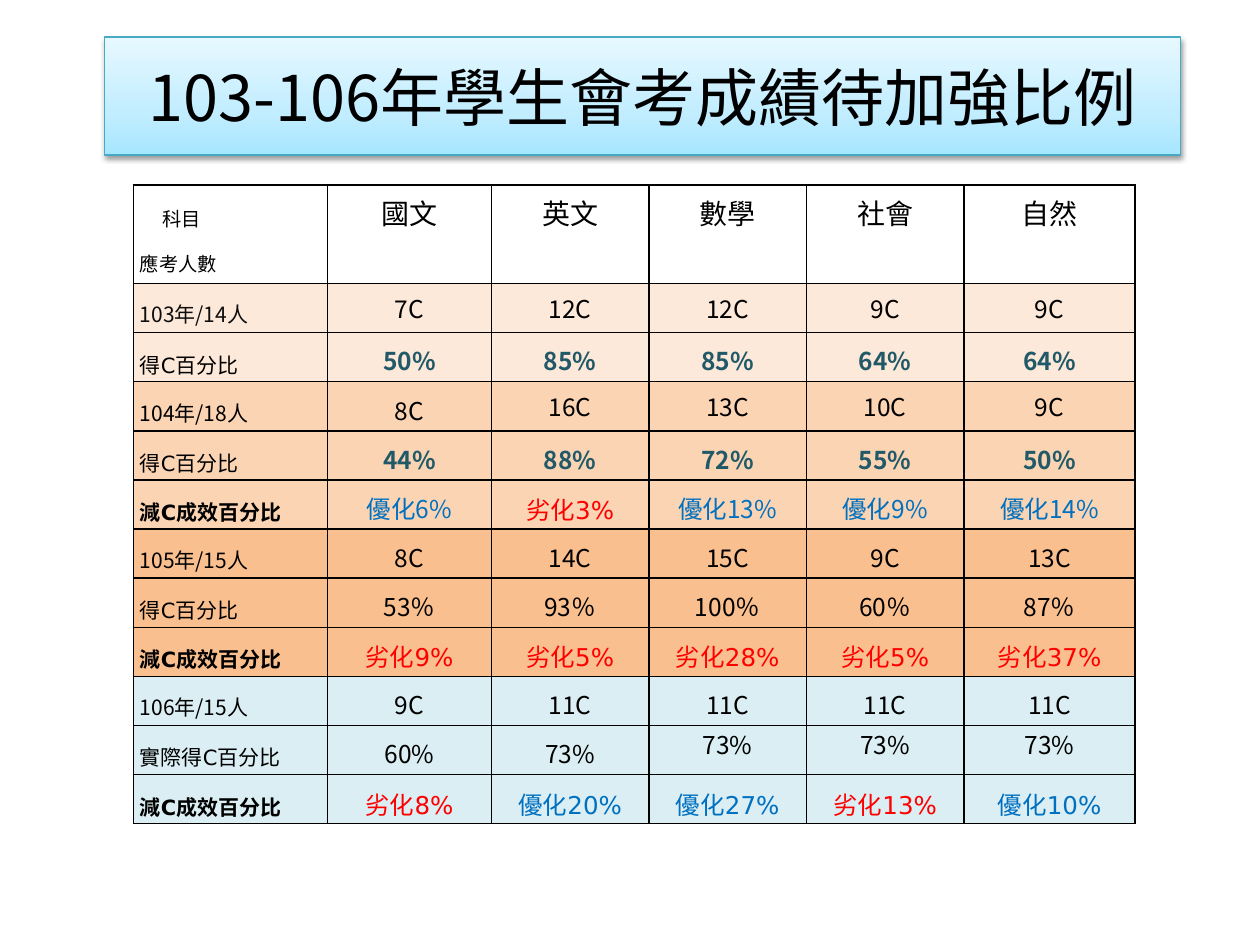
from dataclasses import dataclass

import pptx
import pptx.dml.color
import pptx.enum.text
import pptx.oxml
import pptx.oxml.ns
import pptx.util
from lxml import etree

RGB = pptx.dml.color.RGBColor
ALIGN = pptx.enum.text.PP_ALIGN
ANCHOR = pptx.enum.text.MSO_ANCHOR
NS = pptx.oxml.ns.nsdecls("a")
qn = pptx.oxml.ns.qn

BLACK = RGB(0x00, 0x00, 0x00)
SOFT_BLACK = RGB(0x0D, 0x0D, 0x0D)
TEAL = RGB(0x21, 0x59, 0x68)
BETTER_BLUE = RGB(0x00, 0x70, 0xC0)
WORSE_RED = RGB(0xFF, 0x00, 0x00)
TITLE_EDGE = RGB(0x46, 0xAA, 0xC5)
FILL_103 = RGB(0xFD, 0xE9, 0xD9)
FILL_104 = RGB(0xFB, 0xD4, 0xB4)
FILL_105 = RGB(0xFA, 0xBF, 0x8F)
FILL_106 = RGB(0xDA, 0xEE, 0xF3)
TITLE_STOPS = ((0, "A7E6FF"), (35, "C1EDFF"), (100, "E7F8FF"))

SC, JP, SANS = "Noto Sans CJK SC", "Noto Sans CJK JP", "DejaVu Sans"
SLIDE_W, SLIDE_H = 10, 7.5
COLUMNS = (1.54, 1.3, 1.25, 1.25, 1.25, 1.36)
HEADER_H, ROW_H = 0.78, 0.39
SUBJECTS = ("國文", "英文", "數學", "社會", "自然")
LABEL_SIZE, VALUE_SIZE, EXACT_LINE = 12, 14, 26


@dataclass
class Result:
    """One table row; values from column loose_from on have single line spacing."""
    label: str
    values: str
    fill: RGB
    label_font: str = SANS
    label_color: RGB = BLACK
    font: str = SC
    color: RGB = BLACK
    bold: bool = False
    label_bold: bool = False
    loose_from: int = len(COLUMNS)
    loose_anchor: ANCHOR = ANCHOR.MIDDLE


def count(label: str, values: str, fill: RGB, **options) -> Result:
    return Result(label, values, fill, label_font=JP, font=JP, **options)


def change(values: str, fill: RGB, font: str = SANS) -> Result:
    return Result("減C成效百分比", values, fill, font=font, label_bold=True)


SHARE = "得C百分比"
RESULTS = (
    count("103年/14人", "7C 12C 12C 9C 9C", FILL_103, label_color=SOFT_BLACK, loose_from=1),
    Result(SHARE, "50% 85% 85% 64% 64%", FILL_103, color=TEAL, bold=True),
    count("104年/18人", "8C 16C 13C 10C 9C", FILL_104, loose_from=2),
    Result(SHARE, "44% 88% 72% 55% 50%", FILL_104, color=TEAL, bold=True),
    change("優化6% 劣化3% 優化13% 優化9% 優化14%", FILL_104, SC),
    count("105年/15人", "8C 14C 15C 9C 13C", FILL_105),
    Result(SHARE, "53％ 93％ 100％ 60％ 87％", FILL_105),
    change("劣化9% 劣化5% 劣化28% 劣化5% 劣化37%", FILL_105),
    count("106年/15人", "9C 11C 11C 11C 11C", FILL_106),
    Result("實際得C百分比", "60% 73% 73% 73% 73%", FILL_106,
           loose_from=3, loose_anchor=ANCHOR.TOP),
    change("劣化8% 優化20% 優化27% 劣化13% 優化10%", FILL_106),
)


def write(paragraph, text: str, *, size: float, font: str, color: RGB = BLACK,
          bold: bool = False, align: ALIGN = ALIGN.LEFT,
          line: float | None = None, indent: float = 0) -> None:
    """Add one formatted run and set the paragraph's layout."""
    paragraph.alignment = align
    if line:
        paragraph.line_spacing = pptx.util.Pt(line)
    if indent:
        paragraph._p.get_or_add_pPr().set("marL", str(pptx.util.Inches(indent)))
    run = paragraph.add_run()
    run.text = text
    run.font.size = pptx.util.Pt(size)
    run.font.name = font
    run.font.bold = bold
    run.font.color.rgb = color
    etree.SubElement(run._r.get_or_add_rPr(), qn("a:ea")).set("typeface", font)


def prepare_cell(cell, fill: RGB | None) -> None:
    """Set margins, black borders and fill."""
    cell.margin_left = cell.margin_right = pptx.util.Inches(0.05)
    cell.margin_top = cell.margin_bottom = 0
    properties = cell._tc.get_or_add_tcPr()
    for side in ("lnL", "lnR", "lnT", "lnB"):
        properties.append(pptx.oxml.parse_xml(
            f'<a:{side} {NS} w="12700"><a:solidFill><a:srgbClr val="{BLACK}"/>'
            f'</a:solidFill></a:{side}>'))
    if fill is None:
        cell.fill.background()
    else:
        cell.fill.solid()
        cell.fill.fore_color.rgb = fill


def value_style(text: str, result: Result) -> tuple[str, RGB]:
    """Improvement is blue, decline is red; anything else follows its row."""
    if text.startswith("優化"):
        return result.font, BETTER_BLUE
    if text.startswith("劣化"):
        return SANS, WORSE_RED
    return result.font, result.color


def draw_title(slide) -> None:
    title = slide.shapes.title
    title.left, title.width = (pptx.util.Inches(SLIDE_W * s) for s in (0.083, 0.854))
    title.top, title.height = (pptx.util.Inches(SLIDE_H * s) for s in (0.039, 0.125))
    stops = "".join(f'<a:gs pos="{at * 1000}"><a:srgbClr val="{color}"/></a:gs>'
                    for at, color in TITLE_STOPS)
    # Rounded outline, three-stop gradient and soft shadow
    for part in (
        f'<a:prstGeom {NS} prst="roundRect"><a:avLst/></a:prstGeom>',
        f'<a:gradFill {NS} rotWithShape="1"><a:gsLst>{stops}</a:gsLst>'
        '<a:lin ang="16200000" scaled="1"/></a:gradFill>',
        f'<a:effectLst {NS}><a:outerShdw blurRad="39370" dist="20320" dir="5400000" '
        f'rotWithShape="0"><a:srgbClr val="{BLACK}"><a:alpha val="38000"/></a:srgbClr>'
        '</a:outerShdw></a:effectLst>',
    ):
        title._element.spPr.append(pptx.oxml.parse_xml(part))
    title.line.color.rgb = TITLE_EDGE
    title.line.width = pptx.util.Pt(0.75)
    frame = title.text_frame
    frame.word_wrap = True
    frame.auto_size = pptx.enum.text.MSO_AUTO_SIZE.NONE
    frame.vertical_anchor = ANCHOR.MIDDLE
    write(frame.paragraphs[0], "103-106年學生會考成績待加強比例",
          size=36, font=SC, align=ALIGN.CENTER)


def draw_header(table) -> None:
    for column in range(len(COLUMNS)):
        prepare_cell(table.cell(0, column), None)
    corner = table.cell(0, 0).text_frame
    write(corner.paragraphs[0], "科目", size=11, font=SANS, line=EXACT_LINE, indent=0.18)
    write(corner.add_paragraph(), "應考人數", size=11, font=SANS, line=EXACT_LINE)
    for column, subject in enumerate(SUBJECTS, 1):
        write(table.cell(0, column).text_frame.paragraphs[0], subject,
              size=16, font=SANS, align=ALIGN.CENTER, line=EXACT_LINE)


def draw_result(table, row: int, result: Result) -> None:
    label = table.cell(row, 0)
    prepare_cell(label, result.fill)
    write(label.text_frame.paragraphs[0], result.label, size=LABEL_SIZE,
          font=result.label_font, color=result.label_color,
          bold=result.label_bold, line=EXACT_LINE)
    for column, text in enumerate(result.values.split(), 1):
        cell = table.cell(row, column)
        prepare_cell(cell, result.fill)
        loose = column >= result.loose_from
        if loose:
            cell.vertical_anchor = result.loose_anchor
        font, color = value_style(text, result)
        layout = dict(size=VALUE_SIZE, color=color, bold=result.bold,
                      align=ALIGN.CENTER, line=None if loose else EXACT_LINE)
        paragraph = cell.text_frame.paragraphs[0]
        write(paragraph, text.rstrip("％"), font=font, **layout)
        if text.endswith("％"):
            write(paragraph, "％", font=SANS, **layout)


def draw_results_table(slide) -> None:
    heights = [HEADER_H] + [ROW_H] * len(RESULTS)
    table = slide.shapes.add_table(
        len(heights), len(COLUMNS),
        pptx.util.Inches(SLIDE_W * 0.106), pptx.util.Inches(SLIDE_H * 0.196),
        pptx.util.Inches(sum(COLUMNS)), pptx.util.Inches(sum(heights))).table
    table.first_row = table.horz_banding = False
    for column, width in zip(table.columns, COLUMNS):
        column.width = pptx.util.Inches(width)
    for row, height in zip(table.rows, heights):
        row.height = pptx.util.Inches(height)
    draw_header(table)
    for row, result in enumerate(RESULTS, 1):
        draw_result(table, row, result)


def main() -> None:
    deck = pptx.Presentation()
    deck.slide_width = pptx.util.Inches(SLIDE_W)
    deck.slide_height = pptx.util.Inches(SLIDE_H)
    slide = deck.slides.add_slide(deck.slide_layouts[5])
    draw_title(slide)
    draw_results_table(slide)
    deck.save("out.pptx")


if __name__ == "__main__":
    main()
